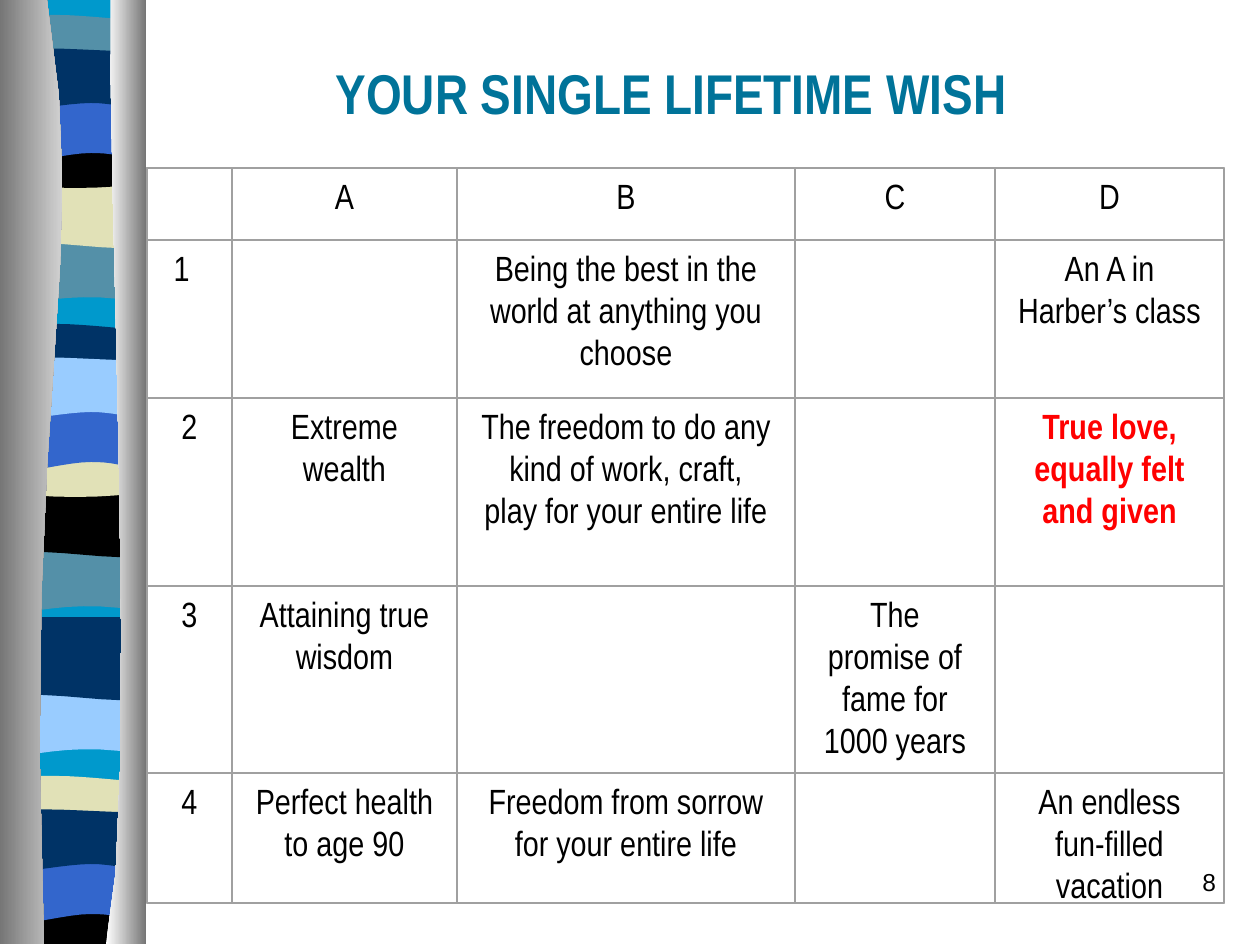
from itertools import pairwise
from pptx import Presentation
from pptx.dml.color import RGBColor as RGB
from pptx.enum.shapes import MSO_SHAPE as Kind
from pptx.enum.text import PP_ALIGN as Align
from pptx.util import Pt

PX = 914400 / 126
HEX = {
    "teal": "0099CC", "slate": "5490A8", "sand": "E1E1B7", "black": "000000",
    "blue": "3366CC", "navy": "003366", "sky": "99CCFF", "white": "FFFFFF",
    "grey": "767676", "light": "D2D2D2", "rule": "A0A0A0", "title": "007399",
    "red": "FF0000",
}


def draw(path, dy=0):
    """Outline from points (2 numbers) and Bezier curves (6 numbers)."""
    pts = [path[0]]
    for seg in path[1:]:
        if len(seg) == 2:
            pts.append(seg)
            continue
        ends = [pts[-1], seg[:2], seg[2:4], seg[4:]]
        for i in range(1, 9):
            t = i / 8
            mix = [(1 - t) ** 3, 3 * t * (1 - t) ** 2, 3 * t * t * (1 - t), t ** 3]
            pts.append([sum(m * p[k] for m, p in zip(mix, ends)) for k in (0, 1)])
    pts = [(round(x * PX), round((y + dy) * PX)) for x, y in pts]
    pen = slide.shapes.build_freeform(*pts[0], scale=1.0)
    pen.add_line_segments(pts[1:], close=True)
    shape = pen.convert_to_shape()
    shape.shadow.inherit = False
    shape.line.fill.background()
    return shape


def write(text, box, face, size, bold, hue, align):
    """Text box with one paragraph."""
    frame = slide.shapes.add_textbox(*(round(n * PX) for n in box)).text_frame
    frame.word_wrap = True
    frame.text = text
    frame.margin_left = frame.margin_right = round(12 * PX)
    para = frame.paragraphs[0]
    para.alignment = align
    font = para.font
    font.name, font.size, font.bold = face, Pt(size), bold
    font.color.rgb = RGB.from_string(HEX[hue])


deck = Presentation()
deck.slide_width, deck.slide_height = round(1260 * PX), round(945 * PX)
slide = deck.slides.add_slide(deck.slide_layouts[6])

# Wavy stripes: each outline comes back further down in other colours
crest = (91, 142, 115, 136, 143, 136)
waves = {
    "base": [(6, 0), (143, 0), (143, 942), (6, 942)],
    "a": [(143, 233), (143, 302), (80, 292, 50, 300, 6, 306), (6, 233)],
    "b": [(143, 165), (143, 245), (121, 255, 49, 237, 7, 245), (7, 165)],
    "c": [(143, 21), (143, 57), (121, 63, 30, 63, 6, 57), (6, 20),
          (15, 14, 37, 15, 59, 15), (82, 15, 126, 20, 143, 21)],
    "d": [(143, 136), (143, 182), (121, 190, 30, 190, 7, 182), (7, 136), crest],
    "foot": [(143, 136), (143, 183), (7, 183), (7, 136), crest],
    "e": [(143, 93), (143, 165), (125, 155, 108, 153, 91, 153),
          (68, 153, 28, 164, 7, 164), (7, 93)],
    "f": [(143, 51), (143, 111), (135, 109, 113, 103, 91, 103),
          (68, 103, 21, 112, 6, 112), (6, 51), (26, 45, 100, 51, 122, 51)],
}
bands = [
    (0, "base teal, a slate, b sand, c slate, d black, e blue, f navy"),
    (309, "a slate, b black, c navy, d sand, e blue, f sky"),
    (452, "a sky, b navy"),
    (761, "c sand, foot black, e blue, f navy"),
]
for dy, row in bands:
    for item in row.split(", "):
        wave, hue = item.split()
        fill = draw(waves[wave], dy).fill
        fill.solid()
        fill.fore_color.rgb = RGB.from_string(HEX[hue])

# Grey columns on both sides of the stripes
sides = [
    ([(47, 0), (92, 272, 22, 373, 44, 944), (0, 944), (0, 0)], ("grey", "light")),
    ([(111, 0), (106, 158, 140, 814, 106, 944), (146, 944), (146, 0)],
     ("white", "grey")),
]
for path, hues in sides:
    fill = draw(path).fill
    fill.gradient()
    fill.gradient_angle = 0
    for stop, hue in zip(fill.gradient_stops, hues):
        stop.color.rgb = RGB.from_string(HEX[hue])

# Grid of wishes: ruled boxes with inset text, then the outer frame
cols = [147, 232, 457, 795, 995, 1224]
rows = [168, 240, 398, 586, 773, 903]
words = [
    ["", "A", "B", "C", "D"],
    ["1", "", "Being the best in the world at anything you choose", "",
     "An A in Harber’s class"],
    ["2", "Extreme wealth",
     "The freedom to do any kind of work, craft, play for your entire life", "",
     "True love, equally felt and given"],
    ["3", "Attaining true wisdom", "", "The promise of fame for 1000 years", ""],
    ["4", "Perfect health to age 90", "Freedom from sorrow for your entire life",
     "", "An endless fun-filled vacation"],
]
boxes = []
for line, (top, low) in zip(words, pairwise(rows)):
    for text, (left, right) in zip(line, pairwise(cols)):
        boxes.append((left, top, right - left, low - top, 0))
        if text:
            love = text.startswith("True love")
            trim = 38 if text == "1" else 22
            write(text, (left + 11, top, right - left - trim, low - top),
                  "Arial Narrow", 20, love, "red" if love else "black", Align.CENTER)
boxes.append((cols[0], rows[0], cols[-1] - cols[0], rows[-1] - rows[0], 0.75))
for *box, width in boxes:
    rect = slide.shapes.add_shape(Kind.RECTANGLE, *(round(n * PX) for n in box))
    rect.shadow.inherit = False
    rect.fill.background()
    rect.line.color.rgb = RGB.from_string(HEX["rule"])
    rect.line.width = Pt(width)

# Title and page number
write("YOUR SINGLE LIFETIME WISH", (283, 52, 777, 79), "Arial Narrow", 32, True,
      "title", Align.CENTER)
write("8", (966, 861, 262, 63), "Arial", 14, False, "black", Align.RIGHT)

deck.save("out.pptx")
